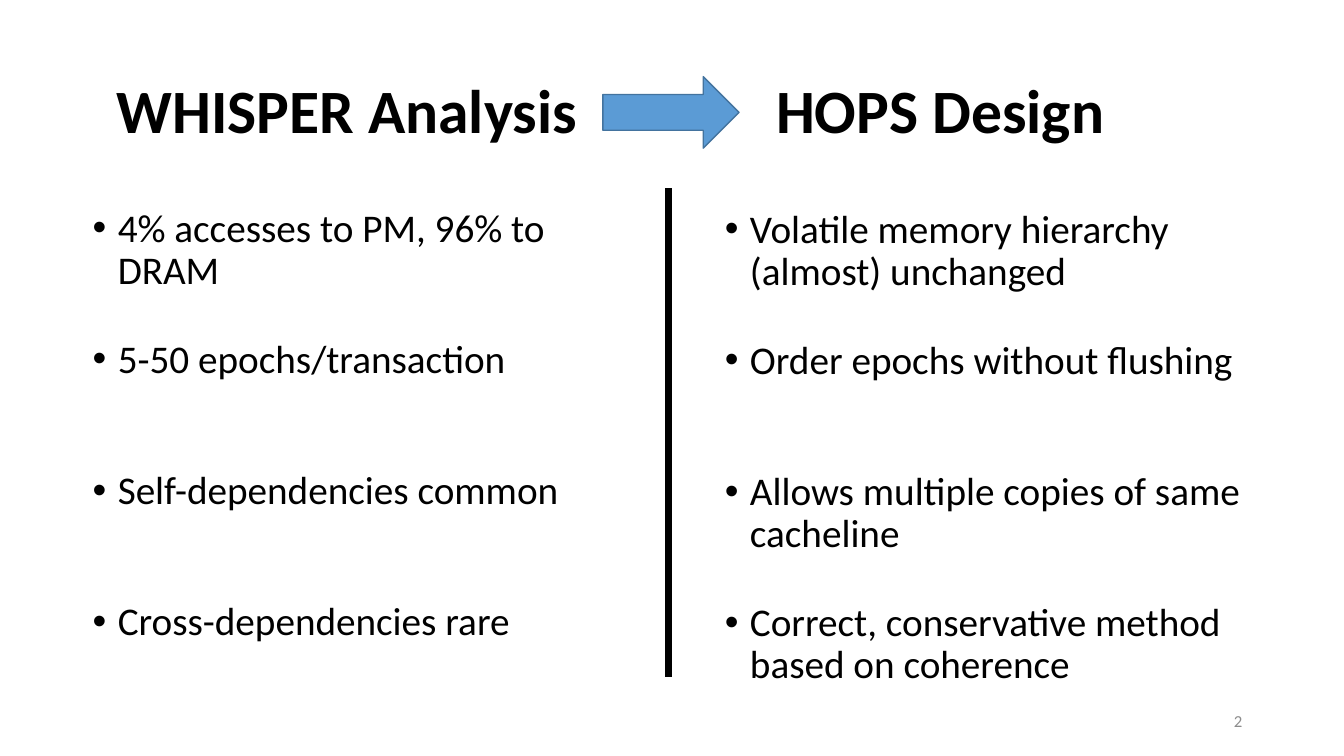
"""Build the slide that sets WHISPER analysis findings beside HOPS design choices."""
import pptx
import pptx.util
import pptx.dml.color
import pptx.enum.shapes
import pptx.enum.text
import pptx.oxml.ns
import lxml.etree

Inches, Pt = pptx.util.Inches, pptx.util.Pt
PP, MSO = pptx.enum.text.PP_ALIGN, pptx.enum.text.MSO_ANCHOR

TITLE = "WHISPER Analysis\tHOPS Design"
TITLE_TAB = 6.54
PAGE = "2"
COLUMNS = [
    (0.82, 2.02, [
        "4% accesses to PM, 96% to DRAM",
        "5-50 epochs/transaction",
        "Self-dependencies common",
        "Cross-dependencies rare",
    ]),
    (7.09, 2.03, [
        "Volatile memory hierarchy (almost) unchanged",
        "Order epochs without flushing",
        "Allows multiple copies of same cacheline",
        "Correct, conservative method based on coherence",
    ]),
]
ROW_STEP = 1.3
POINT_SIZE = (5.5, 0.69)
TITLE_FONT = {"name": "Calibri", "size": Pt(44), "bold": True}
POINT_FONT = {"name": "Calibri", "size": Pt(28)}
PAGE_FONT = {"name": "Calibri", "size": Pt(12)}
TITLE_PARA = {"line_spacing": 0.9}
POINT_PARA = {"line_spacing": 0.9, "space_before": Pt(10)}
PAGE_PARA = {"alignment": PP.RIGHT}


def rgb(value):
    return pptx.dml.color.RGBColor.from_string(value)


def add_xml(parent, tag, **attrs):
    el = lxml.etree.SubElement(parent, pptx.oxml.ns.qn(tag))
    for key, value in attrs.items():
        el.set(key, str(value))
    return el


def set_all(target, values):
    for key, value in values.items():
        setattr(target, key, value)


def add_text(s, box, text, font, para, color="000000", anchor=MSO.TOP):
    sp = s.shapes.add_textbox(*map(Inches, box))
    tf = sp.text_frame
    set_all(tf, {"word_wrap": True, "vertical_anchor": anchor})
    p = tf.paragraphs[0]
    set_all(p, para)
    r = p.add_run()
    r.text = text
    set_all(r.font, font)
    r.font.color.rgb = rgb(color)
    return p


def add_title(s):
    p = add_text(s, (1.06, 0.4, 11.36, 1.45), TITLE, TITLE_FONT, TITLE_PARA,
                 anchor=MSO.MIDDLE)
    tabs = add_xml(p._p.get_or_add_pPr(), "a:tabLst")
    add_xml(tabs, "a:tab", pos=Inches(TITLE_TAB), algn="l")


def add_point(s, left, top, text):
    p = add_text(s, (left, top, *POINT_SIZE), text, POINT_FONT, POINT_PARA)
    pPr = p._p.get_or_add_pPr()
    pPr.set("marL", str(Inches(0.25)))
    pPr.set("indent", str(Inches(-0.25)))
    add_xml(pPr, "a:buFont", typeface="Arial")
    add_xml(pPr, "a:buChar", char="•")


def add_arrow(s):
    sp = s.shapes.add_shape(pptx.enum.shapes.MSO_SHAPE.RIGHT_ARROW,
                            *map(Inches, (5.98, 0.76, 1.35, 0.71)))
    sp.shadow.inherit = False
    sp.fill.solid()
    sp.fill.fore_color.rgb = rgb("5B9BD5")
    sp.line.color.rgb = rgb("43739E")
    sp.line.width = Pt(1)


def add_divider(s):
    sp = s.shapes.add_connector(pptx.enum.shapes.MSO_CONNECTOR.STRAIGHT,
                                *map(Inches, (6.63, 1.87, 6.63, 6.72)))
    sp.line.color.rgb = rgb("000000")
    sp.line.width = Pt(4.5)
    add_xml(sp._element.spPr, "a:effectLst")


def main():
    prs = pptx.Presentation()
    prs.slide_width, prs.slide_height = Inches(13.33), Inches(7.5)
    s = prs.slides.add_slide(prs.slide_layouts[6])
    add_title(s)
    add_arrow(s)
    add_divider(s)
    for left, top, points in COLUMNS:
        for row, text in enumerate(points):
            add_point(s, left, top + row * ROW_STEP, text)
    add_text(s, (9.42, 6.95, 3, 0.4), PAGE, PAGE_FONT, PAGE_PARA, "8C8C8C", MSO.MIDDLE)
    prs.save("out.pptx")


if __name__ == "__main__":
    main()
